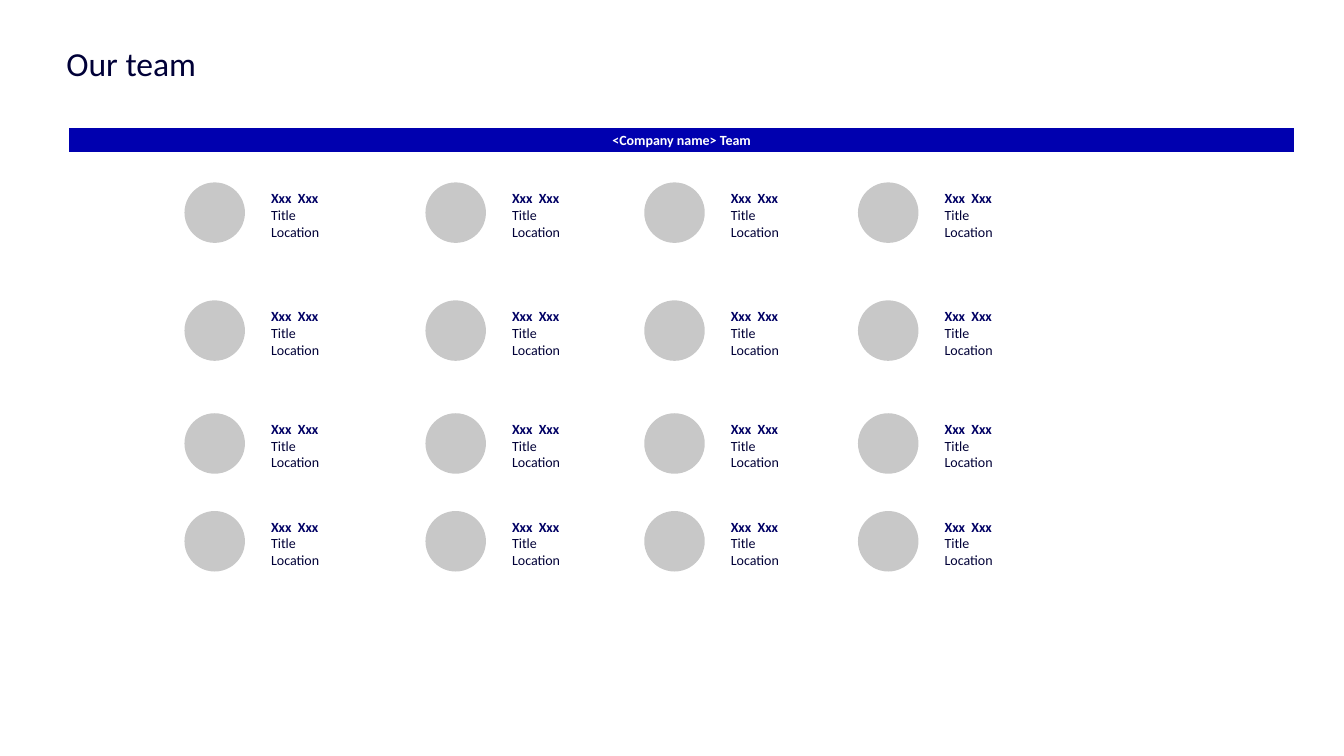
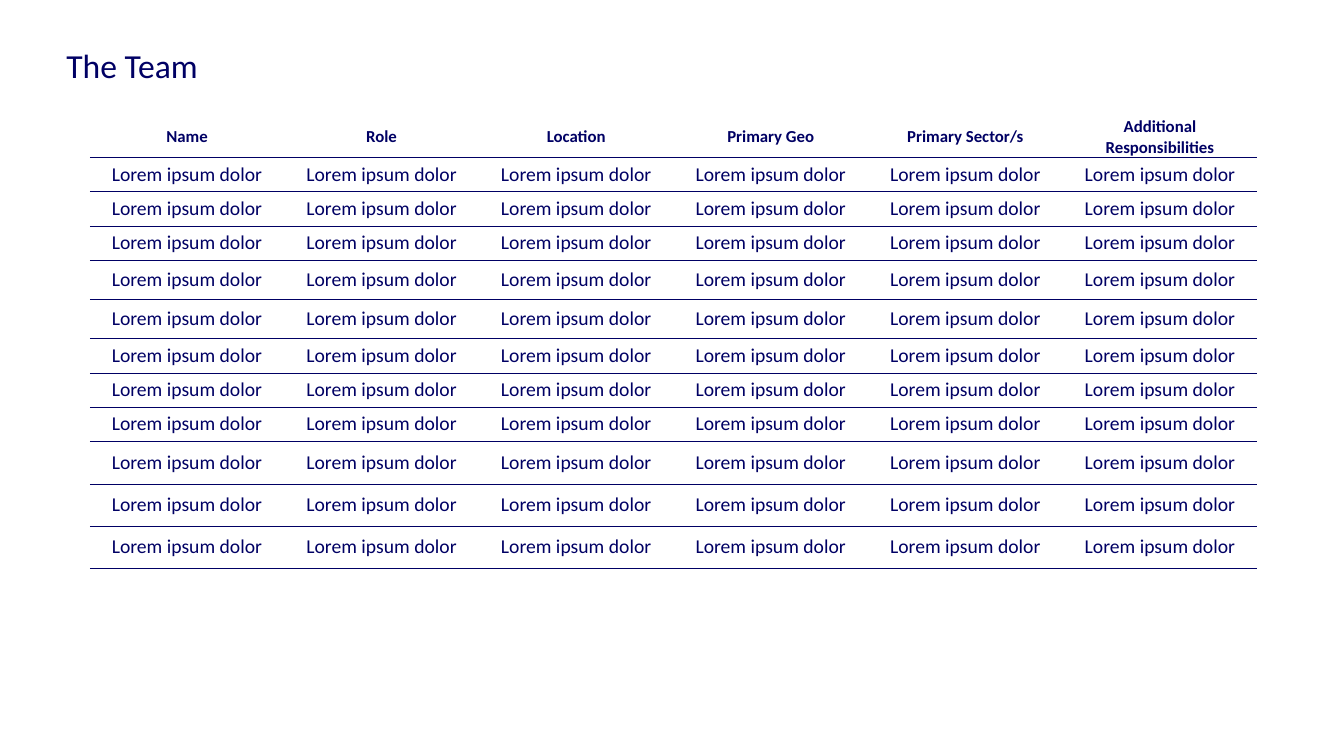
"""Build two team slides: a grid of people and a table of roles."""
import pptx
import pptx.dml.color
import pptx.enum.shapes
import pptx.enum.text
import pptx.oxml
import pptx.oxml.ns
import pptx.util

NAVY = pptx.dml.color.RGBColor(0x00, 0x00, 0x64)
INK = pptx.dml.color.RGBColor(0x00, 0x00, 0x37)
BLUE = pptx.dml.color.RGBColor(0x00, 0x00, 0xAF)
GREY = pptx.dml.color.RGBColor(0xC8, 0xC8, 0xC8)
WHITE = pptx.dml.color.RGBColor(0xFF, 0xFF, 0xFF)

ALIGN = pptx.enum.text.PP_ALIGN
ANCHOR = pptx.enum.text.MSO_ANCHOR
SHAPE = pptx.enum.shapes.MSO_SHAPE

PERSON_LEFTS = [183, 422, 639, 851]
PERSON_TOPS = [181, 298, 410, 507]
HEADINGS = ["Name", "Role", "Location", "Primary Geo", "Primary Sector/s",
            "Additional Responsibilities"]
ROW_HEIGHTS = [34] * 4 + [39] * 2 + [34] * 3 + [42] * 3


def px(length):
    return pptx.util.Emu(length * 9144)


class TeamDeck:
    font = "Calibri"

    def __init__(self, width, height):
        self.deck = pptx.Presentation()
        self.deck.slide_width = px(width)
        self.deck.slide_height = px(height)
        self.page = None

    def add_page(self, title, color, anchor):
        self.page = self.deck.slides.add_slide(self.deck.slide_layouts[6])
        box = self.text_box(self.page.shapes, 56, 42, 1220, 51)
        box.text_frame.text = title
        box.text_frame.vertical_anchor = anchor
        para = box.text_frame.paragraphs[0]
        para.line_spacing = 0.9
        self.style(para, 24, color)

    def style(self, para, size, color, bold=False):
        for span in para.runs:
            span.font.name = self.font
            span.font.size = pptx.util.Pt(size)
            span.font.bold = bold
            span.font.color.rgb = color

    def text_box(self, shapes, left, top, width, height):
        box = shapes.add_textbox(px(left), px(top), px(width), px(height))
        box.text_frame.word_wrap = True
        return box

    def filled_shape(self, shapes, kind, left, top, width, height, color):
        shape = shapes.add_shape(kind, px(left), px(top), px(width), px(height))
        shape.shadow.inherit = False
        shape.fill.solid()
        shape.fill.fore_color.rgb = color
        shape.line.fill.background()
        return shape

    def band(self, text, left, top, width, height):
        band = self.filled_shape(self.page.shapes, SHAPE.RECTANGLE,
                                 left, top, width, height, BLUE)
        band.line.color.rgb = WHITE
        band.line.width = pptx.util.Pt(6)
        band.text_frame.text = text
        band.text_frame.vertical_anchor = ANCHOR.MIDDLE
        para = band.text_frame.paragraphs[0]
        para.alignment = ALIGN.CENTER
        self.style(para, 10, WHITE, bold=True)

    def person(self, left, top, name, title, location):
        group = self.page.shapes.add_group_shape()
        box = self.text_box(group.shapes, left + 76, top + 2, 138, 61)
        box.text_frame.text = "\n".join([name, title, location])
        box.text_frame.auto_size = pptx.enum.text.MSO_AUTO_SIZE.SHAPE_TO_FIT_TEXT
        name_para, *detail_paras = box.text_frame.paragraphs
        self.style(name_para, 10, NAVY, bold=True)
        for para in detail_paras:
            self.style(para, 10, INK)
        self.filled_shape(group.shapes, SHAPE.OVAL, left, top, 60, 60, GREY)

    def border(self, cell, side, points):
        fill = f'<a:solidFill><a:srgbClr val="{NAVY}"/></a:solidFill>' if points else "<a:noFill/>"
        cell._tc.get_or_add_tcPr().append(pptx.oxml.parse_xml(
            f'<a:{side} {pptx.oxml.ns.nsdecls("a")} w="{pptx.util.Pt(points)}">'
            f'{fill}</a:{side}>'))

    def table_cell(self, cell, text, size, bold, above, below):
        for side, points in (("lnL", 0), ("lnR", 0), ("lnT", above), ("lnB", below)):
            self.border(cell, side, points)
        cell.fill.background()
        cell.vertical_anchor = ANCHOR.MIDDLE
        cell.margin_left = cell.margin_right = px(7)
        cell.margin_top = cell.margin_bottom = 0
        cell.text_frame.text = text
        para = cell.text_frame.paragraphs[0]
        para.alignment = ALIGN.CENTER
        para.space_after = pptx.util.Pt(8)
        self.style(para, size, NAVY, bold)

    def table(self, left, top, column_width, row_heights, rows):
        columns = len(rows[0])
        frame = self.page.shapes.add_table(
            len(rows), columns, px(left), px(top),
            px(column_width * columns), px(sum(row_heights)))
        table = frame.table
        table.first_row = table.horz_banding = False
        for column in table.columns:
            column.width = px(column_width)
        rules = [0, 1] + [0.25] * (len(rows) - 1)
        for index, texts in enumerate(rows):
            table.rows[index].height = px(row_heights[index])
            heading = index == 0
            for column, text in enumerate(texts):
                self.table_cell(table.cell(index, column), text,
                                12 if heading else 14, heading,
                                rules[index], rules[index + 1])


def main():
    team = TeamDeck(1333, 750)

    team.add_page("Our team", INK, ANCHOR.TOP)
    team.band("<Company name> Team", 64, 123, 1224, 32)
    for top in PERSON_TOPS:
        for left in PERSON_LEFTS:
            team.person(left, top, "Xxx  Xxx", "Title", "Location")

    team.add_page("The Team", NAVY, ANCHOR.MIDDLE)
    body = [["Lorem ipsum dolor"] * len(HEADINGS)] * (len(ROW_HEIGHTS) - 1)
    team.table(89, 116, 193, ROW_HEIGHTS, [HEADINGS] + body)

    team.deck.save("out.pptx")


if __name__ == "__main__":
    main()
